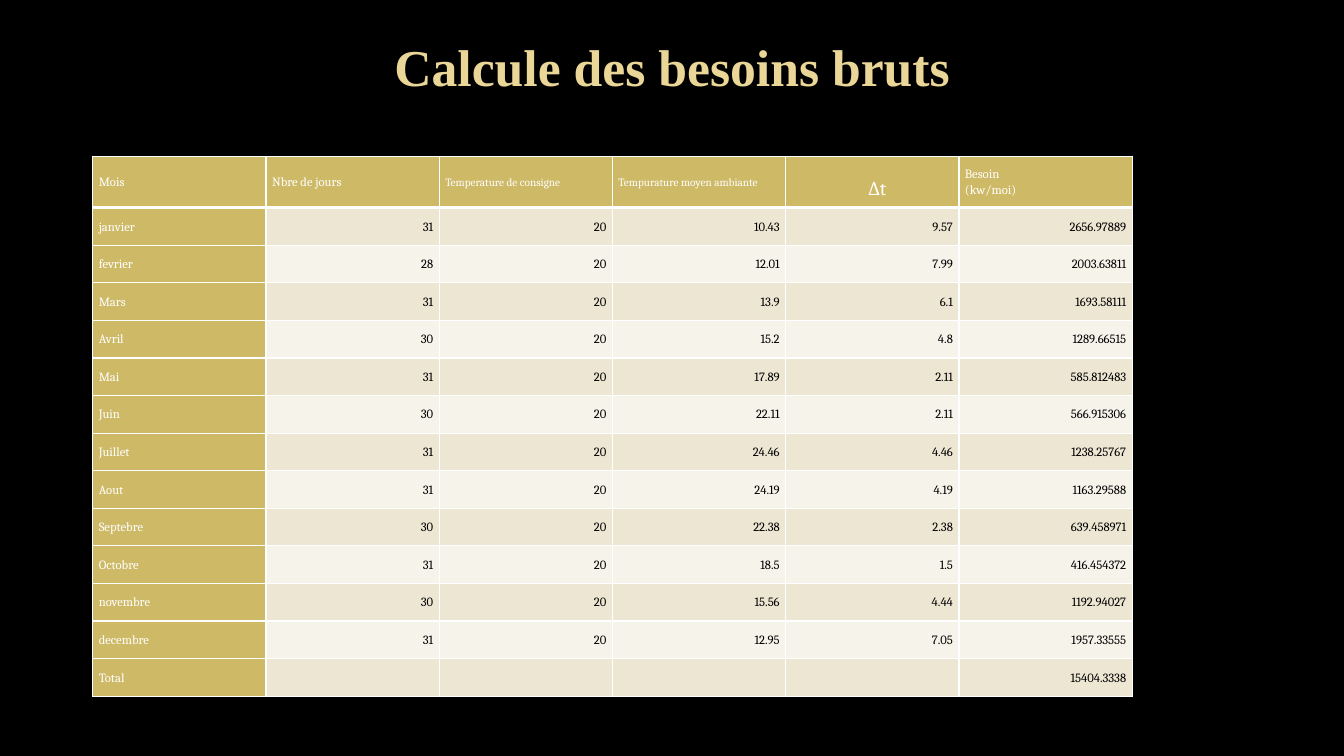
from lxml import etree
from pptx import Presentation
from pptx.dml.color import RGBColor
from pptx.enum.text import MSO_ANCHOR, PP_ALIGN
from pptx.oxml.ns import qn
from pptx.util import Inches, Pt

TOP, MID = MSO_ANCHOR.TOP, MSO_ANCHOR.MIDDLE
LEFT, CENTER, RIGHT = PP_ALIGN.LEFT, PP_ALIGN.CENTER, PP_ALIGN.RIGHT

TITLE = "Calcule des besoins bruts"
HEADS = [
    ("Mois", "body"),
    ("Nbre de jours", "body"),
    ("Temperature de consigne", "small"),
    ("Tempurature moyen ambiante", "small"),
    ("∆t", "delta"),
    ("Besoin\n(kw/moi)", "body"),
]
ROWS = [
    ("janvier", "31", "20", "10.43", "9.57", "2656.97889"),
    ("fevrier", "28", "20", "12.01", "7.99", "2003.63811"),
    ("Mars", "31", "20", "13.9", "6.1", "1693.58111"),
    ("Avril", "30", "20", "15.2", "4.8", "1289.66515"),
    ("Mai", "31", "20", "17.89", "2.11", "585.812483"),
    ("Juin", "30", "20", "22.11", "2.11", "566.915306"),
    ("Juillet", "31", "20", "24.46", "4.46", "1238.25767"),
    ("Aout", "31", "20", "24.19", "4.19", "1163.29588"),
    ("Septebre", "30", "20", "22.38", "2.38", "639.458971"),
    ("Octobre", "31", "20", "18.5", "1.5", "416.454372"),
    ("novembre", "30", "20", "15.56", "4.44", "1192.94027"),
    ("decembre", "31", "20", "12.95", "7.05", "1957.33555"),
    ("Total", "", "", "", "", "15404.3338"),
]
THEME = {
    "back": "000000", "title": "EAD696", "gold": "CEB966",
    "bands": ("EDE6D3", "F6F3EA"), "light": "FFFFFF", "dark": "000000",
    "fonts": {"title": "Times New Roman", "table": "Cambria"},
    "sizes": {"title": 36.9, "body": 9, "small": 8, "delta": 14},
}
BOX = {"left": 0.67, "top": 0.3, "width": 12, "height": 1.25}
GRID = {"left": 0.92, "top": 1.55, "width": 10.31, "height": 5.36}
HEAD = 0.51
PAD = {"margin_left": 0.06, "margin_right": 0.06, "margin_top": 0, "margin_bottom": 0}
SHIFT = {"margin_left": 0.16, "margin_top": 0.14}


def apply(item, vals):
    for key, val in vals.items():
        setattr(item, key, val)


def inch(vals):
    return {key: Inches(val) for key, val in vals.items()}


def style(frame, size, color, face, align, **font):
    for para in frame.paragraphs:
        para.alignment = align
        for run in para.runs:
            apply(run.font, {"size": Pt(size), "name": face, **font})
            run.font.color.rgb = RGBColor.from_string(color)


def edge(cell, widths):
    props = cell._tc.get_or_add_tcPr()
    for side, width in widths.items():
        line = etree.SubElement(props, qn("a:ln" + side), w=str(Pt(width)))
        fill = etree.SubElement(line, qn("a:solidFill"))
        etree.SubElement(fill, qn("a:srgbClr"), val=THEME["light"])


def paint(cell, text, size, color, fill, align, base=1):
    apply(cell, {"text": text, "vertical_anchor": MID, **inch(PAD)})
    edge(cell, {"L": 1, "R": 1, "T": 1, "B": base})
    cell.fill.solid()
    cell.fill.fore_color.rgb = RGBColor.from_string(fill)
    style(cell.text_frame, THEME["sizes"][size], color, THEME["fonts"]["table"], align)
    if size != "delta":
        for para in cell.text_frame.paragraphs:
            para.line_spacing = 1.07


def main():
    deck = Presentation()
    apply(deck, inch({"slide_width": 13.33, "slide_height": 7.5}))
    slide = deck.slides.add_slide(deck.slide_layouts[5])
    slide.background.fill.solid()
    slide.background.fill.fore_color.rgb = RGBColor.from_string(THEME["back"])

    title = slide.shapes.title
    apply(title, inch(BOX))
    title.text_frame.text = TITLE
    title.text_frame.vertical_anchor = TOP
    style(title.text_frame, THEME["sizes"]["title"], THEME["title"],
          THEME["fonts"]["title"], CENTER, bold=True)

    table = slide.shapes.add_table(len(ROWS) + 1, len(HEADS), **inch(GRID)).table
    apply(table, {"first_row": False, "horz_banding": False})
    for col in table.columns:
        col.width = Inches(GRID["width"] / len(HEADS))
    for num, row in enumerate(table.rows):
        row.height = Inches((GRID["height"] - HEAD) / len(ROWS) if num else HEAD)

    for col, (text, size) in enumerate(HEADS):
        cell = table.cell(0, col)
        delta = size == "delta"
        paint(cell, text, size, THEME["light"], THEME["gold"],
              CENTER if delta else LEFT, 3)
        if delta:
            apply(cell, inch(SHIFT))

    for num, row in enumerate(ROWS):
        band = THEME["bands"][num % 2]
        for col, text in enumerate(row):
            look = ((THEME["dark"], band, RIGHT) if col
                    else (THEME["light"], THEME["gold"], LEFT))
            paint(table.cell(num + 1, col), text, "body", *look)

    deck.save("out.pptx")


if __name__ == "__main__":
    main()
